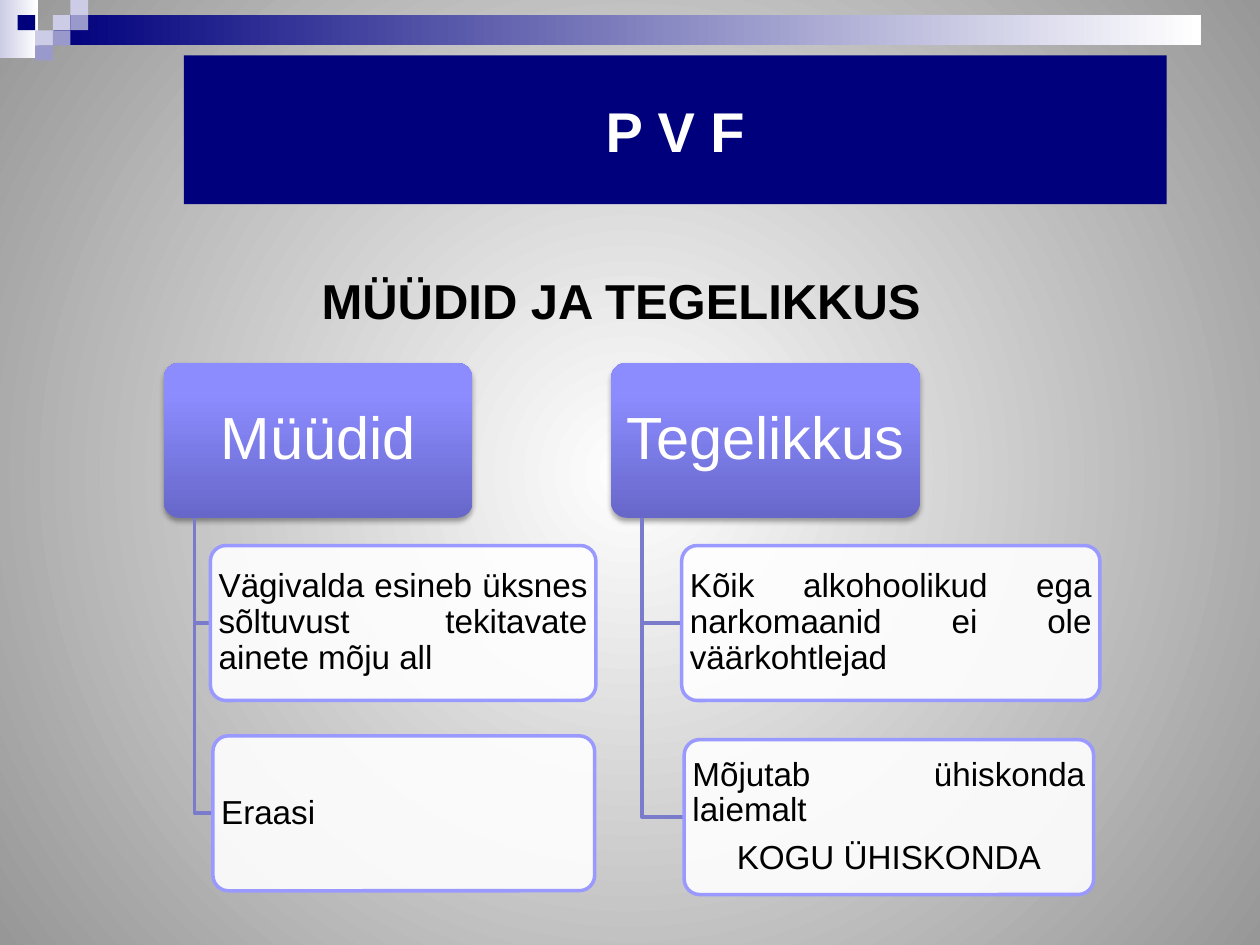
"""Build the "P V F" slide on myths and reality."""
from lxml import etree
from pptx import Presentation
from pptx.dml.color import RGBColor
from pptx.enum import shapes, text
from pptx.oxml import ns
from pptx.util import Inches, Pt

FONT = "Arial"
NAVY, LILAC, PALE = "00007D", "9999CC", "CCCCE6"
WHITE, BLACK, LINK, BORDER = "FFFFFF", "000000", "7B7BCC", "9999FF"
CENTER, JUSTIFY = text.PP_ALIGN.CENTER, text.PP_ALIGN.JUSTIFY
RECT = shapes.MSO_SHAPE.RECTANGLE
ROUNDED = shapes.MSO_SHAPE.ROUNDED_RECTANGLE

BANDS = [
    ((0, 0, 0.3, 0.46), [(0, PALE), (100, WHITE)]),
    ((0.43, 0.12, 9.1, 0.24), [(0, NAVY), (100, WHITE)]),
]
TILE_STEP, TILE_WIDTH, TILE_HEIGHT = 0.14, 0.14, 0.12
TILES = [
    (3, 1, PALE), (4, 0, PALE), (4, 1, LILAC), (2, 2, PALE),
    (1, 1, NAVY), (3, 2, LILAC), (2, 3, LILAC),
]
TITLE = "P V F"
SUBTITLE = "MÜÜDID JA TEGELIKKUS"
HEAD_TOP, HEAD_WIDTH, BOX_HEIGHT = 2.88, 2.45, 1.23
HEAD_STOPS = [(0, "6767CA"), (80, "8C8CFF"), (100, "8E8EFF")]
COLUMNS = [
    (1.3, "Müüdid", [
        (1.67, 4.33, 3.06,
         [("Vägivalda esineb üksnes sõltuvust tekitavate ainete mõju all", JUSTIFY)]),
        (1.69, 5.84, 3.03, [("Eraasi", JUSTIFY)]),
    ]),
    (4.85, "Tegelikkus", [
        (5.41, 4.33, 3.32,
         [("Kõik alkohoolikud ega narkomaanid ei ole väärkohtlejad", JUSTIFY)]),
        (5.43, 5.87, 3.25,
         [("Mõjutab ühiskonda laiemalt", JUSTIFY), ("KOGU ÜHISKONDA", CENTER)]),
    ]),
]


def color(value):
    return RGBColor.from_string(value)


def add_element(parent, tag, **attributes):
    values = {name: str(value) for name, value in attributes.items()}
    return etree.SubElement(parent, ns.qn(tag), values)


def set_gradient(fill, owner, stops, angle=None):
    fill.gradient()
    gradient = owner.find(".//" + ns.qn("a:gradFill"))
    for child in list(gradient):
        gradient.remove(child)
    stop_list = add_element(gradient, "a:gsLst")
    for position, value in stops:
        stop = add_element(stop_list, "a:gs", pos=position * 1000)
        add_element(stop, "a:srgbClr", val=value)
    if angle is None:
        circle = add_element(gradient, "a:path", path="circle")
        add_element(circle, "a:fillToRect", l=50000, t=50000, r=50000, b=50000)
    else:
        add_element(gradient, "a:lin", ang=angle * 60000, scaled=0)


def add_box(slide, kind, place, fill=None):
    shape = slide.shapes.add_shape(kind, *map(Inches, place))
    shape.shadow.inherit = False
    shape.line.fill.background()
    if kind == ROUNDED:
        shape.adjustments[0] = 0.1
    if fill:
        shape.fill.solid()
        shape.fill.fore_color.rgb = color(fill)
    return shape


def write(shape, lines, size, value, bold=False, inset=0.1, spacing=1.0, after=0,
          anchor=text.MSO_ANCHOR.MIDDLE):
    frame = shape.text_frame
    frame.word_wrap = True
    frame.vertical_anchor = anchor
    frame.margin_left = frame.margin_right = Inches(inset)
    frame.margin_top = frame.margin_bottom = Inches(0.05)
    for index, (wording, alignment) in enumerate(lines):
        paragraph = frame.add_paragraph() if index else frame.paragraphs[0]
        paragraph.alignment = alignment
        paragraph.line_spacing = spacing
        paragraph.space_after = Pt(after)
        run = paragraph.add_run()
        run.text = wording
        run.font.name, run.font.size, run.font.bold = FONT, Pt(size), bold
        run.font.color.rgb = color(value)


def add_head(slide, left, wording):
    head = add_box(slide, ROUNDED, (left, HEAD_TOP, HEAD_WIDTH, BOX_HEIGHT))
    properties = head._element.spPr
    set_gradient(head.fill, properties, HEAD_STOPS, 270)
    shadow = add_element(properties.find(ns.qn("a:effectLst")), "a:outerShdw",
                         blurRad=Pt(3.1), dist=Pt(1.8), dir=90 * 60000, rotWithShape=0)
    shade = add_element(shadow, "a:srgbClr", val=BLACK)
    add_element(shade, "a:alpha", val=35000)
    write(head, [(wording, CENTER)], 34, WHITE, inset=0.04, spacing=0.9, after=12)


def add_elbow(slide, trunk, left, middle):
    start = HEAD_TOP + BOX_HEIGHT
    builder = slide.shapes.build_freeform(Inches(trunk), Inches(start))
    corners = [(trunk, middle), (left, middle)]
    builder.add_line_segments([(Inches(x), Inches(y)) for x, y in corners], close=False)
    elbow = builder.convert_to_shape()
    elbow.shadow.inherit = False
    elbow.fill.background()
    elbow.line.color.rgb = color(LINK)
    elbow.line.width = Pt(2)


def add_item(slide, left, top, width, lines):
    item = add_box(slide, ROUNDED, (left, top, width, BOX_HEIGHT), WHITE)
    solid = item._element.spPr.find(ns.qn("a:solidFill"))
    add_element(solid[0], "a:alpha", val=90000)
    item.line.color.rgb = color(BORDER)
    item.line.width = Pt(2)
    write(item, lines, 19, BLACK, inset=0.03, spacing=0.9, after=6.65)


def main():
    presentation = Presentation()
    presentation.slide_width, presentation.slide_height = Inches(10), Inches(7.5)
    slide = presentation.slides.add_slide(presentation.slide_layouts[6])
    set_gradient(slide.background.fill, slide._element, [(0, WHITE), (100, "979797")])

    for place, stops in BANDS:
        band = add_box(slide, RECT, place)
        set_gradient(band.fill, band._element.spPr, stops, 0)
    for column, row, value in TILES:
        place = (column * TILE_STEP, row * TILE_HEIGHT, TILE_WIDTH, TILE_HEIGHT)
        add_box(slide, RECT, place, value)

    title = add_box(slide, RECT, (1.46, 0.44, 7.8, 1.18), NAVY)
    write(title, [(TITLE, CENTER)], 32, WHITE, bold=True)
    subtitle = slide.shapes.add_textbox(*map(Inches, (0.43, 2.1, 9, 0.64)))
    write(subtitle, [(SUBTITLE, CENTER)], 28, BLACK, bold=True,
          anchor=text.MSO_ANCHOR.TOP)

    for head_left, heading, items in COLUMNS:
        add_head(slide, head_left, heading)
        for left, top, width, lines in items:
            add_elbow(slide, head_left + HEAD_WIDTH / 10, left, top + BOX_HEIGHT / 2)
            add_item(slide, left, top, width, lines)

    presentation.save("out.pptx")


if __name__ == "__main__":
    main()
